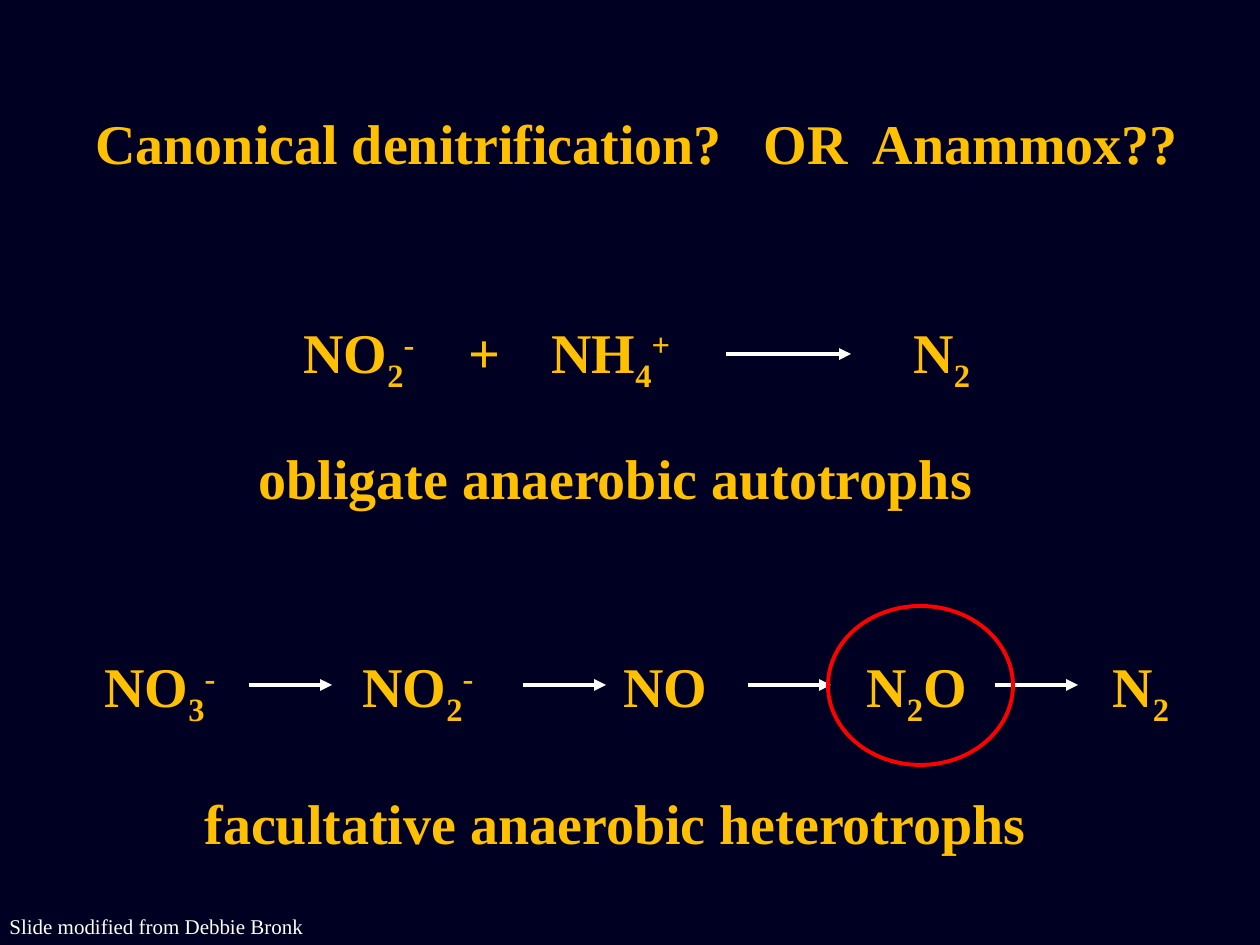
from pptx import Presentation
from pptx.dml.color import RGBColor
from pptx.enum.shapes import MSO_CONNECTOR, MSO_SHAPE
from pptx.enum.text import MSO_AUTO_SIZE
from pptx.oxml.ns import qn
from pptx.util import Emu, Pt
from lxml.etree import SubElement

PX_PER_INCH = 126
FONT = "Times New Roman"
NAVY, GOLD, WHITE, RED = "000022", "FFC000", "FFFFFF", "FF0000"
SUB, SUP = -25000, 30000
LINE_WIDTH = Pt(2.25)


def px(length):
    return Emu(round(length * 914400 / PX_PER_INCH))


def color(hex_value):
    return RGBColor.from_string(hex_value)


def add_text(shapes, box, pieces, size=32, bold=True, fill=GOLD, wrap=False):
    """Add one line of text; each piece is (text, baseline shift)."""
    text_box = shapes.add_textbox(*map(px, box))
    frame = text_box.text_frame
    frame.word_wrap = wrap
    frame.auto_size = MSO_AUTO_SIZE.SHAPE_TO_FIT_TEXT
    paragraph = frame.paragraphs[0]
    for text, baseline in pieces:
        run = paragraph.add_run()
        run.text = text
        run.font.name = FONT
        run.font.size = Pt(size)
        run.font.bold = bold
        run.font.color.rgb = color(fill)
        if baseline:
            run._r.get_or_add_rPr().set("baseline", str(baseline))


def add_arrow(shapes, left, y, length):
    arrow = shapes.add_connector(
        MSO_CONNECTOR.STRAIGHT, px(left), px(y), px(left + length), px(y))
    arrow.line.color.rgb = color(WHITE)
    arrow.line.width = LINE_WIDTH
    properties = arrow._element.spPr
    SubElement(properties.find(qn("a:ln")), qn("a:tailEnd"), type="triangle")
    SubElement(properties, qn("a:effectLst"))


def add_reaction(slide, top, species, arrow_starts, arrow_y, arrow_length):
    """Group a row of species, given as (left, width, pieces), with its arrows."""
    shapes = slide.shapes.add_group_shape().shapes
    for left, width, pieces in species:
        add_text(shapes, (left, top, width, 81), pieces)
    for start in arrow_starts:
        add_arrow(shapes, start, arrow_y, arrow_length)


def add_ring(shapes, box):
    ring = shapes.add_shape(MSO_SHAPE.OVAL, *map(px, box))
    ring.shadow.inherit = False
    ring.fill.background()
    ring.line.color.rgb = color(RED)
    ring.line.width = LINE_WIDTH


def main():
    presentation = Presentation()
    presentation.slide_width, presentation.slide_height = px(1260), px(945)
    slide = presentation.slides.add_slide(presentation.slide_layouts[6])
    slide.background.fill.solid()
    slide.background.fill.fore_color.rgb = color(NAVY)
    shapes = slide.shapes

    nitrate = [("NO", 0), ("3", SUB), ("-", SUP)]
    nitrite = [("NO", 0), ("2", SUB), ("-", SUP)]
    ammonium = [("NH", 0), ("4", SUB), ("+", SUP)]
    nitric_oxide = [("NO", 0)]
    nitrous_oxide = [("N", 0), ("2", SUB), ("O", 0)]
    nitrogen = [("N", 0), ("2", SUB)]

    add_text(shapes, (83, 102, 1119, 81),
             [("Canonical denitrification?   OR  Anammox??", 0)])
    anammox = [(291, 141, nitrite), (456, 57, [("+", 0)]),
               (539, 150, ammonium), (901, 84, nitrogen)]
    add_reaction(slide, 311, anammox, [726], 354, 125)
    denitrification = [(92, 141, nitrate), (350, 141, nitrite),
                       (611, 110, nitric_oxide), (854, 130, nitrous_oxide),
                       (1100, 86, nitrogen)]
    add_reaction(slide, 645, denitrification, [249, 523, 748, 995], 685, 83)
    add_text(shapes, (246, 437, 741, 79), [("obligate anaerobic autotrophs", 0)])
    add_text(shapes, (192, 782, 849, 79),
             [("facultative anaerobic heterotrophs", 0)])
    add_ring(shapes, (828, 606, 185, 159))
    add_text(shapes, (-3, 907, 323, 38), [("Slide modified from Debbie Bronk", 0)],
             size=12, bold=False, fill=WHITE)
    presentation.save("out.pptx")


if __name__ == "__main__":
    main()
